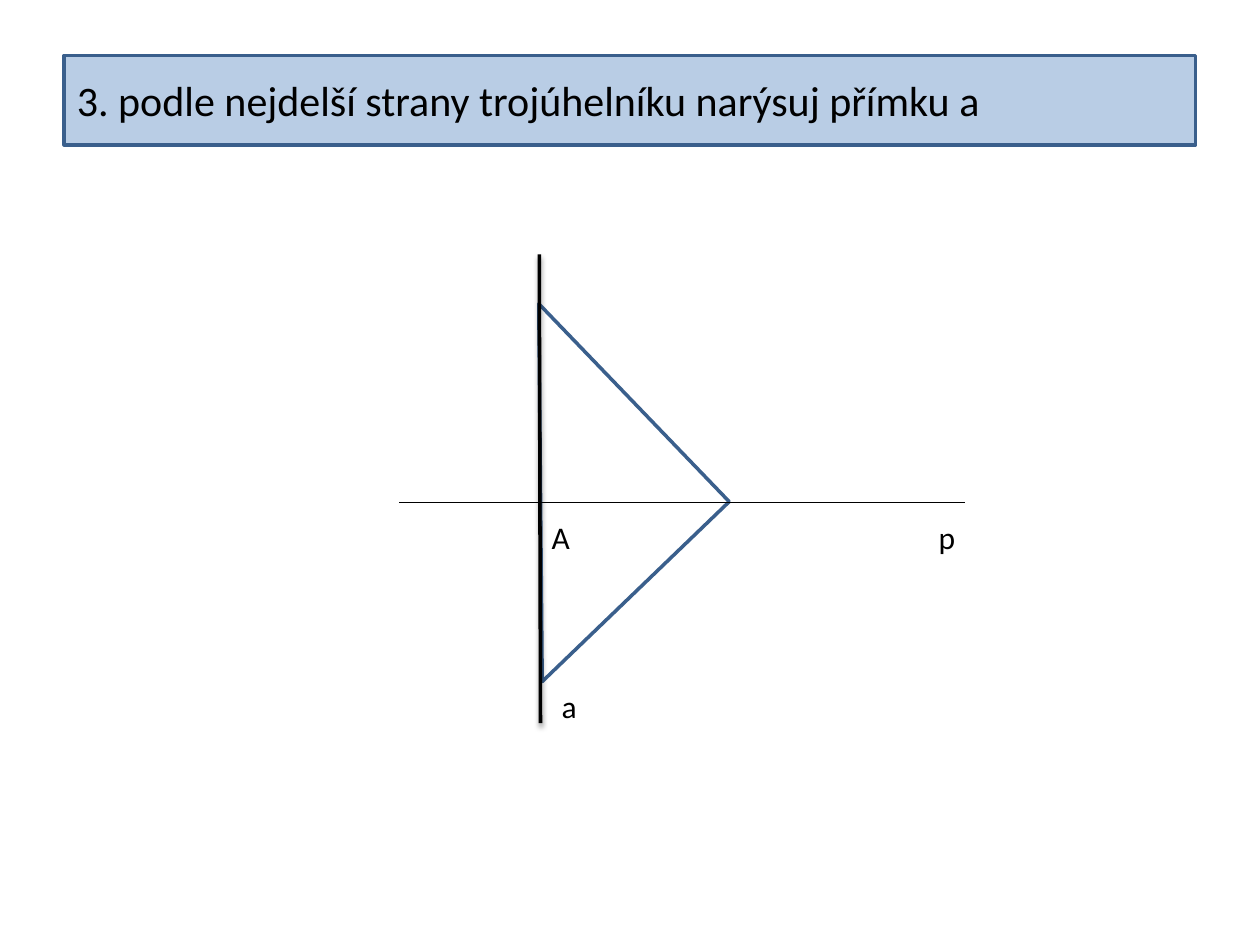
from lxml import etree
from pptx import Presentation
from pptx import util as u
from pptx.dml.color import RGBColor
from pptx.enum import shapes, text
from pptx.oxml.ns import qn

HUES = {"ink": "000000", "edge": "3A5F8C", "band": "B9CDE5"}
HUES = {name: RGBColor.from_string(code) for name, code in HUES.items()}

deck = Presentation()
deck.slide_width, deck.slide_height = u.Inches(10), u.Inches(7.5)
slide = deck.slides.add_slide(deck.slide_layouts[5])


def write(shape, words, size, form):
    """Fill the shape's text frame, with frame settings taken from form."""
    frame = shape.text_frame
    for key, val in form.items():
        setattr(frame, key, val)
    para = frame.paragraphs[0]
    para.alignment = text.PP_ALIGN.LEFT
    run = para.add_run()
    run.text = words
    for key, val in {"name": "Calibri", "size": u.Pt(size)}.items():
        setattr(run.font, key, val)
    run.font.color.rgb = HUES["ink"]


def place(shape, *box):
    for key, val in zip(("left", "top", "width", "height"), box):
        setattr(shape, key, u.Inches(val))


# Title band
title = slide.shapes.title
place(title, 0.51, 0.44, 8.98, 0.71)
title.fill.solid()
title.fill.fore_color.rgb = HUES["band"]
write(title, "3. podle nejdelší strany trojúhelníku narýsuj přímku a", 24,
      {"vertical_anchor": text.MSO_ANCHOR.MIDDLE, "word_wrap": True,
       "auto_size": text.MSO_AUTO_SIZE.NONE})

# Triangle with its longest side upright
tri = slide.shapes.add_shape(shapes.MSO_SHAPE.RIGHT_TRIANGLE, 0, 0, 0, 0)
place(tri, 3.2, 2.88, 2.18, 2.06)
tri.rotation = 226.1
tri.fill.background()
tri.shadow.inherit = False
for shape in (title, tri):
    shape.line.color.rgb = HUES["edge"]
    shape.line.width = u.Pt(2)

# Line p, the tick at point A, and line a with its soft shadow
lines = [
    (3.17, 3.99, 7.66, 3.99, 0.75, False),
    (4.29, 3.83, 4.29, 4.14, 0.75, False),
    (4.28, 2.02, 4.29, 5.74, 2, True),
]
for *ends, width, soft in lines:
    line = slide.shapes.add_connector(
        shapes.MSO_CONNECTOR.STRAIGHT, *map(u.Inches, ends))
    line.line.color.rgb = HUES["ink"]
    line.line.width = u.Pt(width)
    fx = etree.SubElement(line._element.spPr, qn("a:effectLst"))
    if soft:
        shade = etree.SubElement(
            fx, qn("a:outerShdw"), blurRad=str(u.Pt(3.1)), dist=str(u.Pt(1.6)),
            dir="5400000", rotWithShape="0")
        hue = etree.SubElement(shade, qn("a:srgbClr"), val=str(HUES["ink"]))
        etree.SubElement(hue, qn("a:alpha"), val="38000")

# Labels
labels = [("p", 7.35, 4.06, 0.31), ("A", 4.28, 4.06, 0.24), ("a", 4.36, 5.4, 0.39)]
for words, left, top, width in labels:
    label = slide.shapes.add_textbox(0, 0, 0, 0)
    place(label, left, top, width, 0.4)
    write(label, words, 18, {"word_wrap": True,
                             "auto_size": text.MSO_AUTO_SIZE.SHAPE_TO_FIT_TEXT})

deck.save("out.pptx")
